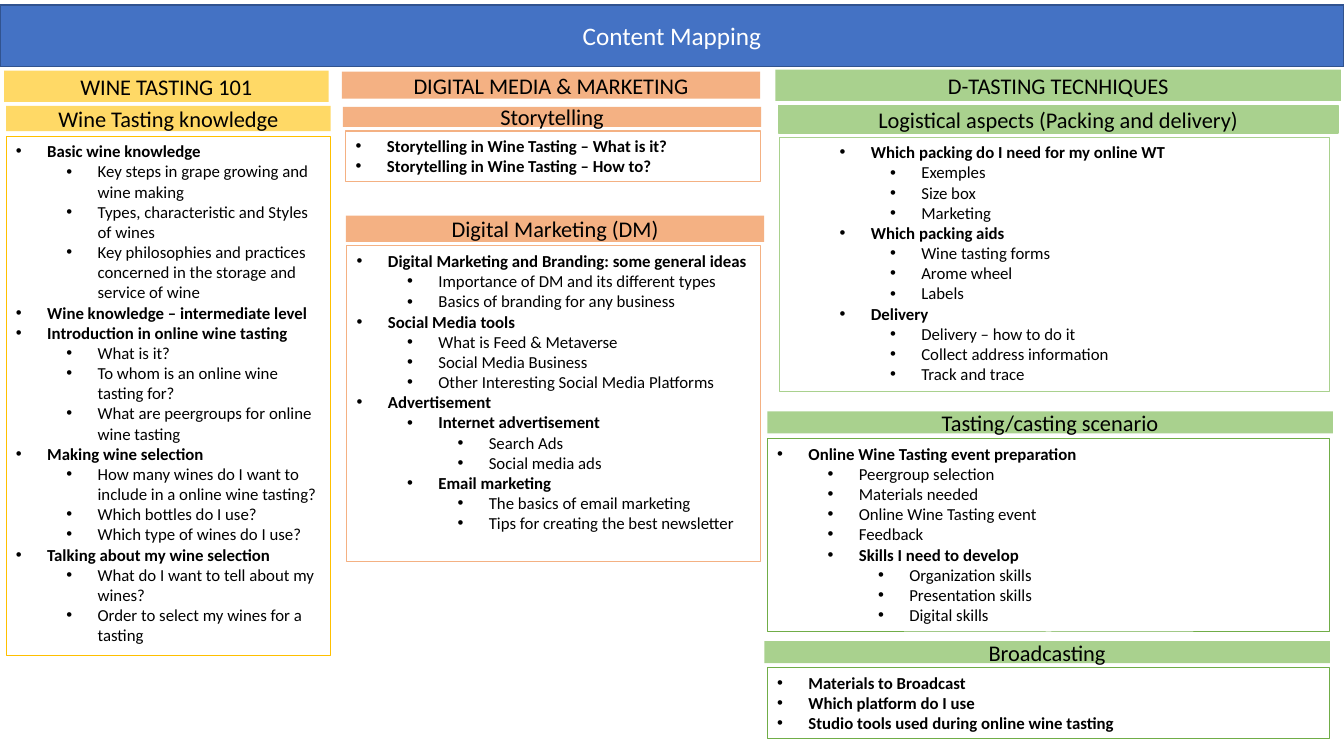
from dataclasses import dataclass

from lxml.etree import SubElement
from pptx import Presentation
from pptx.dml.color import RGBColor
from pptx.enum.shapes import MSO_SHAPE
from pptx.enum.text import MSO_ANCHOR, PP_ALIGN
from pptx.oxml.ns import qn
from pptx.util import Inches, Pt


@dataclass(frozen=True)
class Theme:
    font: str = "Calibri"
    title_size: int = 18
    heading_size: int = 16
    body_size: int = 12
    blue: str = "4472C4"
    dark_blue: str = "31538F"
    yellow: str = "FFD966"
    gold: str = "FFC000"
    orange: str = "F4B183"
    light_green: str = "A9D18E"
    green: str = "70AD47"
    white: str = "FFFFFF"
    black: str = "000000"


THEME = Theme()

# Positions are (left, top, width, height) in inches.
TITLE = ("Content Mapping", (0, 0.05, 13.33, 0.61))

# Heading text, position, fill, outline
HEADINGS = [
    ("WINE TASTING 101", (0.04, 0.7, 3.22, 0.31), THEME.yellow, None),
    ("Wine Tasting knowledge", (0.06, 1.05, 3.22, 0.25), THEME.yellow, None),
    ("DIGITAL MEDIA & MARKETING", (3.39, 0.71, 4.15, 0.27), THEME.orange, None),
    ("Storytelling", (3.4, 1.06, 4.15, 0.2), THEME.orange, None),
    ("Digital Marketing (DM)", (3.43, 2.14, 4.15, 0.26), THEME.orange, None),
    ("D-TASTING TECNHIQUES", (7.69, 0.69, 5.61, 0.31), THEME.light_green, None),
    ("Logistical aspects (Packing and delivery)", (7.72, 1.05, 5.55, 0.27),
     THEME.light_green, THEME.light_green),
    ("Tasting/casting scenario", (7.61, 4.08, 5.61, 0.22), THEME.light_green, None),
    ("Broadcasting", (7.58, 6.36, 5.61, 0.22), THEME.light_green, None),
]

# Position, outline, topics as (level, text)
TOPIC_BOXES = [
    ((0.06, 1.35, 3.22, 5.15), THEME.gold, [
        (0, "Basic wine knowledge"),
        (1, "Key steps in grape growing and wine making"),
        (1, "Types, characteristic and Styles of wines"),
        (1, "Key philosophies and practices concerned in the storage and service of wine"),
        (0, "Wine knowledge – intermediate level"),
        (0, "Introduction in online wine tasting"),
        (1, "What is it?"),
        (1, "To whom is an online wine tasting for?"),
        (1, "What are peergroups for online wine tasting"),
        (0, "Making wine selection"),
        (1, "How many wines do I want to include in a online wine tasting?"),
        (1, "Which bottles do I use?"),
        (1, "Which type of wines do I use?"),
        (0, "Talking about my wine selection"),
        (1, "What do I want to tell about my wines?"),
        (1, "Order to select my wines for a tasting"),
    ]),
    ((3.43, 1.3, 4.11, 0.5), THEME.orange, [
        (0, "Storytelling in Wine Tasting – What is it?"),
        (0, "Storytelling in Wine Tasting – How to?"),
    ]),
    ((3.44, 2.44, 4.1, 3.13), THEME.orange, [
        (0, "Digital Marketing and Branding: some general ideas"),
        (1, "Importance of DM and its different types"),
        (1, "Basics of branding for any business"),
        (0, "Social Media tools"),
        (1, "What is Feed & Metaverse"),
        (1, "Social Media Business"),
        (1, "Other Interesting Social Media Platforms"),
        (0, "Advertisement"),
        (1, "Internet advertisement"),
        (2, "Search Ads"),
        (2, "Social media ads"),
        (1, "Email marketing"),
        (2, "The basics of email marketing"),
        (2, "Tips for creating the best newsletter"),
    ]),
    ((7.73, 1.36, 5.46, 2.52), THEME.light_green, [
        (1, "Which packing do I need for my online WT"),
        (2, "Exemples"),
        (2, "Size box"),
        (2, "Marketing"),
        (1, "Which packing aids"),
        (2, "Wine tasting forms"),
        (2, "Arome wheel"),
        (2, "Labels"),
        (1, "Delivery"),
        (2, "Delivery – how to do it"),
        (2, "Collect address information"),
        (2, "Track and trace"),
    ]),
    ((7.61, 4.35, 5.58, 1.92), THEME.green, [
        (0, "Online Wine Tasting event preparation"),
        (1, "Peergroup selection"),
        (1, "Materials needed"),
        (1, "Online Wine Tasting event"),
        (1, "Feedback"),
        (1, "Skills I need to develop"),
        (2, "Organization skills"),
        (2, "Presentation skills"),
        (2, "Digital skills"),
    ]),
    ((7.61, 6.62, 5.58, 0.71), THEME.green, [
        (0, "Materials to Broadcast"),
        (0, "Which platform do I use"),
        (0, "Studio tools used during online wine tasting"),
    ]),
]

HANGING_INDENT = 0.31
LEVEL_STEP = 0.5


def add_box(slide, position, fill=None, outline=None, outline_width=1):
    shape = slide.shapes.add_shape(MSO_SHAPE.RECTANGLE, *map(Inches, position))
    shape.shadow.inherit = False
    if fill:
        shape.fill.solid()
        shape.fill.fore_color.rgb = RGBColor.from_string(fill)
    else:
        shape.fill.background()
    if outline:
        shape.line.color.rgb = RGBColor.from_string(outline)
        shape.line.width = Pt(outline_width)
    else:
        shape.line.fill.background()
    shape.text_frame.word_wrap = True
    return shape


def write(paragraph, text, size, color=THEME.black, bold=False):
    paragraph.text = text
    font = paragraph.font
    font.name, font.size, font.bold = THEME.font, Pt(size), bold
    font.color.rgb = RGBColor.from_string(color)


def add_bar(slide, text, position, fill, outline, size=THEME.heading_size, color=THEME.black):
    """Add a filled bar with one centred line of text."""
    frame = add_box(slide, position, fill, outline).text_frame
    frame.vertical_anchor = MSO_ANCHOR.MIDDLE
    frame.paragraphs[0].alignment = PP_ALIGN.CENTER
    write(frame.paragraphs[0], text, size, color)


def set_bullet(paragraph, level):
    paragraph.level = level
    properties = paragraph._p.get_or_add_pPr()
    properties.set("marL", str(Inches(HANGING_INDENT + level * LEVEL_STEP)))
    properties.set("indent", str(-Inches(HANGING_INDENT)))
    bullet_color = SubElement(properties, qn("a:buClr"))
    SubElement(bullet_color, qn("a:srgbClr"), val=THEME.black)
    SubElement(properties, qn("a:buFont"), typeface="Arial")
    SubElement(properties, qn("a:buChar"), char="•")


def add_topics(slide, position, outline, topics):
    """Add an outlined list; top-level topics and those with subtopics are bold."""
    frame = add_box(slide, position, outline=outline, outline_width=0.75).text_frame
    frame.vertical_anchor = MSO_ANCHOR.TOP
    levels = [level for level, _ in topics]
    for index, (level, text) in enumerate(topics):
        paragraph = frame.add_paragraph() if index else frame.paragraphs[0]
        paragraph.alignment = PP_ALIGN.LEFT
        set_bullet(paragraph, level)
        has_subtopics = max(levels[index + 1:index + 2], default=level) > level
        write(paragraph, text, THEME.body_size, bold=level == levels[0] or has_subtopics)


def main():
    presentation = Presentation()
    presentation.slide_width, presentation.slide_height = Inches(13.33), Inches(7.5)
    slide = presentation.slides.add_slide(presentation.slide_layouts[6])
    add_bar(slide, *TITLE, THEME.blue, THEME.dark_blue, THEME.title_size, THEME.white)
    for heading in HEADINGS:
        add_bar(slide, *heading)
    for topic_box in TOPIC_BOXES:
        add_topics(slide, *topic_box)
    presentation.save("out.pptx")


if __name__ == "__main__":
    main()
